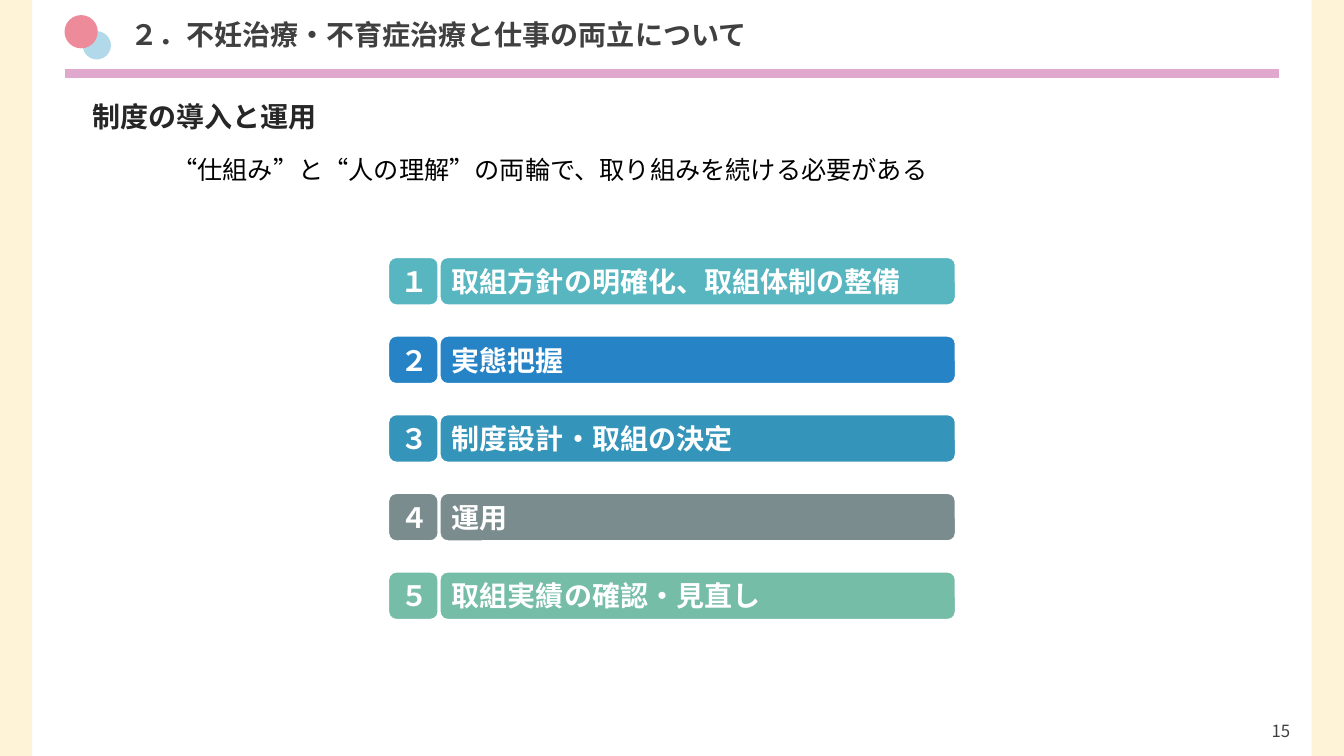
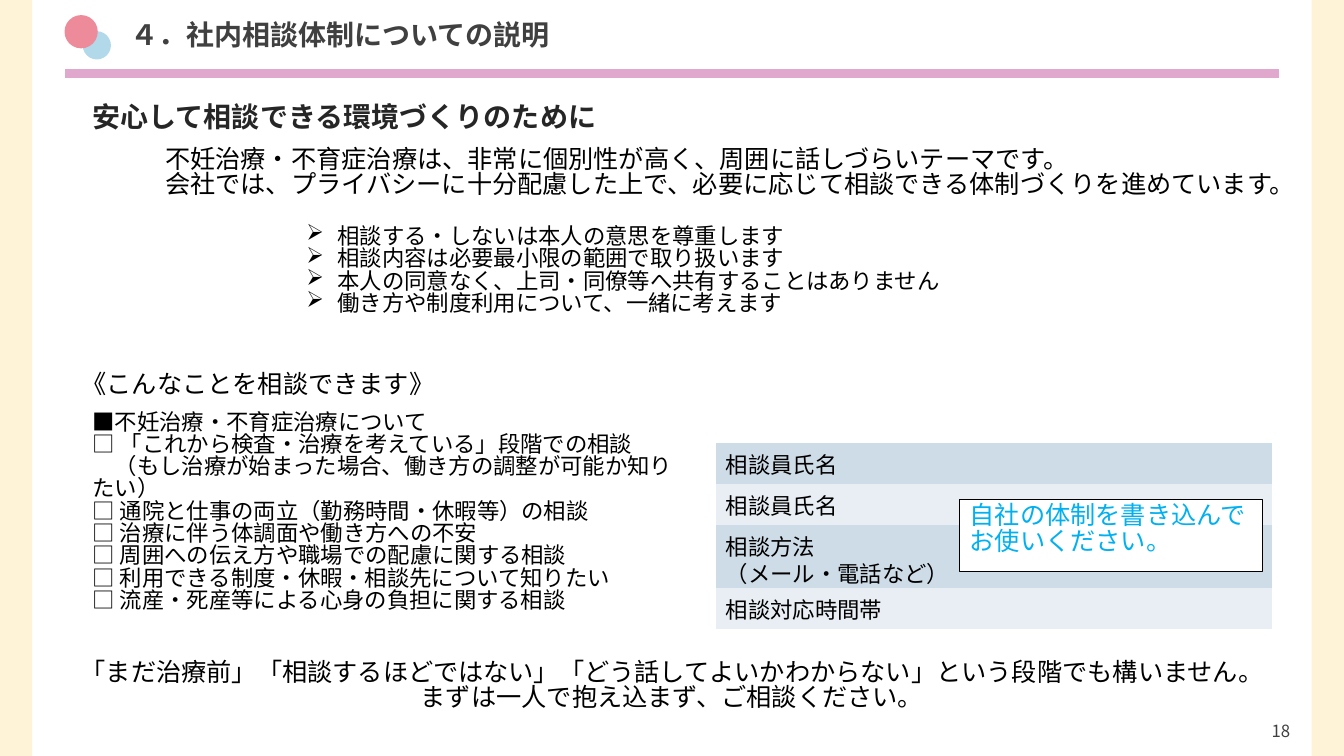
from pptx import Presentation
from pptx.dml.color import RGBColor
from pptx.enum.shapes import MSO_CONNECTOR, MSO_SHAPE
from pptx.enum.text import MSO_ANCHOR, MSO_AUTO_SIZE, PP_ALIGN
from pptx.oxml.ns import qn
from pptx.util import Inches, Pt
from lxml import etree

RECT, ROUNDED, OVAL = MSO_SHAPE.RECTANGLE, MSO_SHAPE.ROUNDED_RECTANGLE, MSO_SHAPE.OVAL
STRAIGHT = MSO_CONNECTOR.STRAIGHT
TOP, MIDDLE = MSO_ANCHOR.TOP, MSO_ANCHOR.MIDDLE
LEFT, CENTER = PP_ALIGN.LEFT, PP_ALIGN.CENTER
NO_FIT = MSO_AUTO_SIZE.NONE

BLACK = RGBColor(0x00, 0x00, 0x00)
WHITE = RGBColor(0xFF, 0xFF, 0xFF)
TITLE_GRAY = RGBColor(0x40, 0x40, 0x40)
HEADING_GRAY = RGBColor(0x26, 0x26, 0x26)
CREAM = RGBColor(0xFE, 0xF3, 0xD6)
RULE_PINK = RGBColor(0xDF, 0xA8, 0xCC)
LIGHT_BLUE = RGBColor(0xB1, 0xD9, 0xE9)
ROSE = RGBColor(0xED, 0x8B, 0x9B)
HINT_BLUE = RGBColor(0x00, 0xB0, 0xF0)
ROW_DARK = RGBColor(0xCE, 0xDC, 0xE7)
ROW_LIGHT = RGBColor(0xE8, 0xEE, 0xF3)
TEAL = RGBColor(0x58, 0xB6, 0xC0)
BLUE = RGBColor(0x26, 0x83, 0xC6)
SEA = RGBColor(0x34, 0x94, 0xBA)
SLATE = RGBColor(0x7A, 0x8C, 0x8E)
MINT = RGBColor(0x75, 0xBD, 0xA7)

FONT = "Noto Sans CJK JP"
TIGHT = 0.83  # line spacing that brings the font to 1.2 em
NO_STYLE = "{2D5ABB26-0587-4C30-8999-92F81FD0307C}"


class Deck:
    """Holds the shared style and the current slide."""

    def __init__(self):
        self.prs = Presentation()
        self.prs.slide_width, self.prs.slide_height = Inches(13.33), Inches(7.5)
        self.slide = None

    def new_slide(self, title, number):
        self.slide = self.prs.slides.add_slide(self.prs.slide_layouts[5])
        # Side bands, rule and circles
        for left in (0, 13.01):
            self.shape(RECT, left, 0, 0.32, 7.5, CREAM)
        self.rule(0.64, 12.69, 0.73)
        self.shape(OVAL, 0.82, 0.31, 0.28, 0.28, LIGHT_BLUE)
        self.shape(OVAL, 0.64, 0.15, 0.33, 0.33, ROSE)
        # Title and page number
        heading = self.slide.shapes.title
        heading.left, heading.top = Inches(1.19), Inches(0.18)
        heading.width, heading.height = Inches(8.15), Inches(0.44)
        self.set_text(heading.text_frame, [title], 20, TITLE_GRAY, bold=True)
        self.text(12.32, 7.07, 0.77, 0.39, [str(number)], 12, TITLE_GRAY,
                  align=CENTER, anchor=MIDDLE)

    def set_text(self, frame, lines, size, color=BLACK, bold=False, align=LEFT,
                 anchor=TOP, spacing=TIGHT, bullet=None):
        frame.word_wrap = True
        frame.auto_size = NO_FIT
        frame.vertical_anchor = anchor
        self.paragraphs(frame, lines, size, color, bold, align, spacing, bullet)

    def paragraphs(self, frame, lines, size, color, bold, align, spacing, bullet=None):
        frame.text = "\n".join(lines)
        for paragraph in frame.paragraphs:
            paragraph.alignment = align
            paragraph.line_spacing = spacing
            if bullet:
                props = paragraph._p.get_or_add_pPr()
                props.set("marL", str(Inches(0.31)))
                props.set("indent", str(-Inches(0.31)))
                etree.SubElement(props, qn("a:buChar")).set("char", bullet)
            for run in paragraph.runs:
                font = run.font
                font.name, font.size, font.bold = FONT, Pt(size), bold
                font.color.rgb = color
                east_asian = etree.Element(qn("a:ea"), typeface=FONT)
                run._r.rPr.find(qn("a:latin")).addnext(east_asian)

    def text(self, left, top, width, height, lines, size, color=BLACK, **style):
        box = self.slide.shapes.add_textbox(
            Inches(left), Inches(top), Inches(width), Inches(height))
        self.set_text(box.text_frame, lines, size, color, **style)

    def heading(self, words):
        self.text(0.82, 0.99, 9.73, 0.44, [words], 20, HEADING_GRAY, bold=True)

    def shape(self, kind, left, top, width, height, fill, line=None, weight=0.75):
        shape = self.slide.shapes.add_shape(
            kind, Inches(left), Inches(top), Inches(width), Inches(height))
        shape.shadow.inherit = False
        shape.fill.solid()
        shape.fill.fore_color.rgb = fill
        if line is None:
            shape.line.fill.background()
        else:
            shape.line.color.rgb = line
            shape.line.width = Pt(weight)
        return shape

    def rule(self, left, right, y):
        line = self.slide.shapes.add_connector(
            STRAIGHT, Inches(left), Inches(y), Inches(right), Inches(y))
        line.line.color.rgb = RULE_PINK
        line.line.width = Pt(6)
        etree.SubElement(line._element.spPr, qn("a:effectLst"))

    def step(self, top, number, words, color):
        for left, width, label, align in ((4.36, 5.12, words, LEFT),
                                          (3.85, 0.5, number, CENTER)):
            bar = self.shape(ROUNDED, left, top, width, 0.48, color, WHITE, 1.5)
            self.set_text(bar.text_frame, [label], 20, WHITE, bold=True, align=align,
                          anchor=MIDDLE, spacing=1.0)

    def table(self, left, top, widths, rows):
        frame = self.slide.shapes.add_table(
            len(rows), len(widths), Inches(left), Inches(top),
            Inches(sum(widths)), Inches(sum(height for height, _ in rows)))
        next(frame._element.iter(qn("a:tableStyleId"))).text = NO_STYLE
        table = frame.table
        for column, width in zip(table.columns, widths):
            column.width = Inches(width)
        for index, (height, label) in enumerate(rows):
            table.rows[index].height = Inches(height)
            for cell in table.rows[index].cells:
                cell.fill.solid()
                cell.fill.fore_color.rgb = ROW_LIGHT if index % 2 else ROW_DARK
                cell.margin_top, cell.margin_bottom = Inches(0.09), 0
            self.paragraphs(table.cell(index, 0).text_frame, label, 16, BLACK,
                            False, LEFT, TIGHT)


def build_steps(deck):
    deck.new_slide("２．不妊治療・不育症治療と仕事の両立について", 15)
    deck.heading("制度の導入と運用")
    deck.text(1.61, 1.53, 8.45, 0.4,
              ["“仕組み”と“人の理解”の両輪で、取り組みを続ける必要がある"], 18)
    # Five numbered steps
    steps = [
        ("１", "取組方針の明確化、取組体制の整備", TEAL),
        ("２", "実態把握", BLUE),
        ("３", "制度設計・取組の決定", SEA),
        ("４", "運用", SLATE),
        ("５", "取組実績の確認・見直し", MINT),
    ]
    for index, step in enumerate(steps):
        deck.step(2.55 + 0.78 * index, *step)


def build_consultation(deck):
    deck.new_slide("４．社内相談体制についての説明", 18)
    deck.heading("安心して相談できる環境づくりのために")
    deck.text(1.54, 1.42, 11.5, 0.71, [
        "不妊治療・不育症治療は、非常に個別性が高く、周囲に話しづらいテーマです。",
        "会社では、プライバシーに十分配慮した上で、必要に応じて相談できる体制づくりを進めています。",
    ], 18)
    # Promises
    deck.text(2.94, 2.2, 7.71, 1.18, [
        "相談する・しないは本人の意思を尊重します",
        "相談内容は必要最小限の範囲で取り扱います",
        "本人の同意なく、上司・同僚等へ共有することはありません",
        "働き方や制度利用について、一緒に考えます",
    ], 16, bullet="➢")
    # Topics
    deck.text(0.71, 3.66, 6.67, 0.4, ["《こんなことを相談できます》"], 18)
    deck.text(0.82, 4.04, 6.17, 2.26, [
        "■不妊治療・不育症治療について",
        "□ 「これから検査・治療を考えている」段階での相談",
        "　（もし治療が始まった場合、働き方の調整が可能か知りたい）",
        "□ 通院と仕事の両立（勤務時間・休暇等）の相談",
        "□ 治療に伴う体調面や働き方への不安",
        "□ 周囲への伝え方や職場での配慮に関する相談",
        "□ 利用できる制度・休暇・相談先について知りたい",
        "□ 流産・死産等による心身の負担に関する相談",
    ], 16)
    # Closing message
    deck.text(0.5, 6.51, 12.33, 0.71, [
        "「まだ治療前」「相談するほどではない」「どう話してよいかわからない」という段階でも構いません。",
        "まずは一人で抱え込まず、ご相談ください。",
    ], 18, align=CENTER)
    # Contact table with its hint
    deck.table(7.1, 4.39, (2.59, 2.93), [
        (0.41, ["相談員氏名"]),
        (0.41, ["相談員氏名"]),
        (0.62, ["相談方法", "（メール・電話など）"]),
        (0.41, ["相談対応時間帯"]),
    ])
    hint = deck.shape(RECT, 9.52, 4.96, 3, 0.71, WHITE, BLACK)
    deck.set_text(hint.text_frame, ["自社の体制を書き込んで", "お使いください。"], 18, HINT_BLUE)


def main():
    deck = Deck()
    build_steps(deck)
    build_consultation(deck)
    deck.prs.save("out.pptx")


if __name__ == "__main__":
    main()
